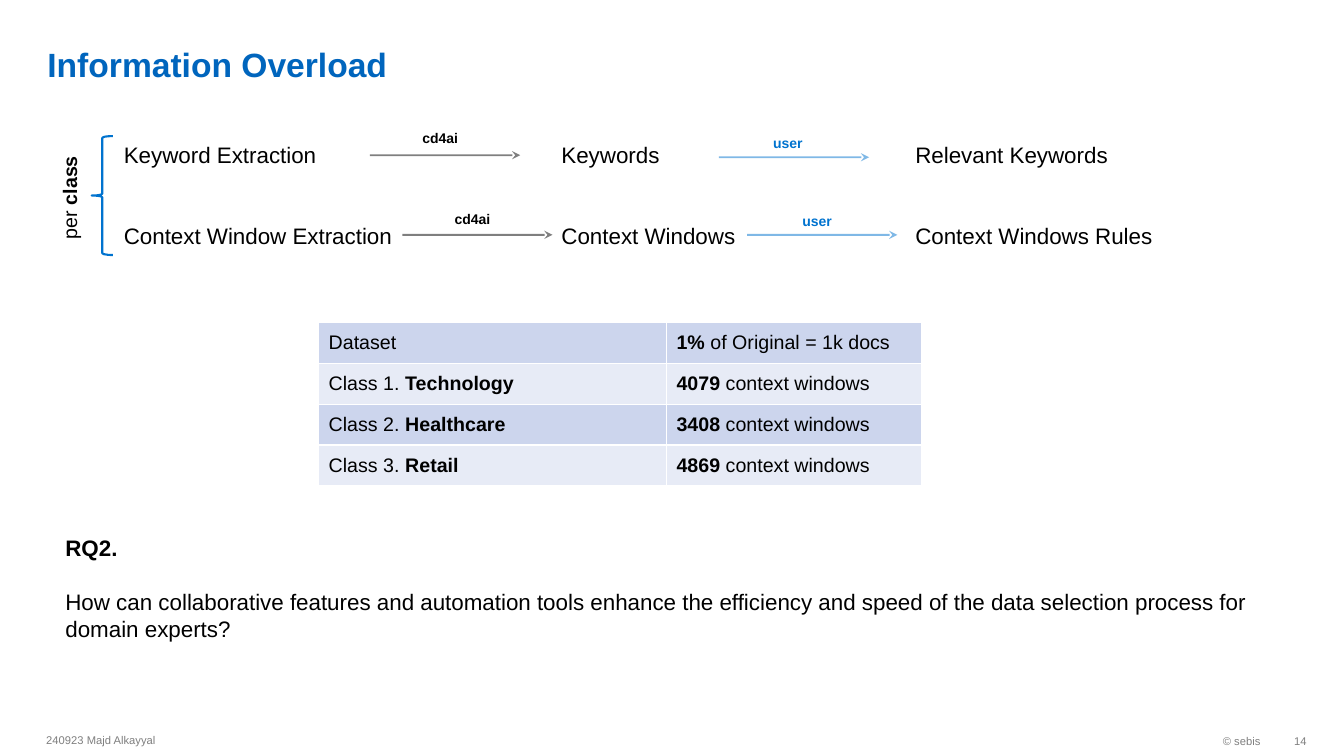
from dataclasses import dataclass

from lxml import etree
from pptx import Presentation
from pptx.dml.color import RGBColor
from pptx.enum.shapes import MSO_CONNECTOR as Connector, MSO_SHAPE as Shape
from pptx.enum.text import MSO_ANCHOR as Anchor, MSO_AUTO_SIZE as AutoSize, PP_ALIGN as Align
from pptx.oxml.ns import qn
from pptx.util import Inches, Pt

BLACK, WHITE, GREY = "000000", "FFFFFF", "7F7F7F"
TITLE_BLUE, BLUE = "0065BD", "0073CF"
BAND_FILLS = ("CCD5ED", "E7EBF6")
BODY_LINE = 19.3  # height of one 16 pt line, in points


@dataclass
class Run:
    text: str
    bold: bool = False


@dataclass
class Label:
    left: float
    top: float
    width: float
    height: float
    paragraphs: list[list[Run]]
    size: float = 16
    color: str = BLACK
    gap: float = 0
    align: Align = Align.LEFT
    anchor: Anchor = Anchor.TOP
    rotation: float = 0
    right_inset: float = 0.1


@dataclass
class Arrow:
    left: float
    top: float
    label: str
    label_left: float
    label_top: float
    color: str


def rgb(color: str) -> RGBColor:
    return RGBColor.from_string(color)


def add_runs(paragraph, runs: list[Run], size: float, color: str) -> None:
    for part in runs:
        run = paragraph.add_run()
        run.text = part.text
        run.font.name = "Arial"
        run.font.size = Pt(size)
        run.font.bold = part.bold
        run.font.color.rgb = rgb(color)


def add_label(slide, label: Label) -> None:
    box = slide.shapes.add_textbox(
        Inches(label.left), Inches(label.top), Inches(label.width), Inches(label.height))
    box.rotation = label.rotation
    frame = box.text_frame
    frame.word_wrap = True
    frame.vertical_anchor = label.anchor
    frame.margin_right = Inches(label.right_inset)
    for index, runs in enumerate(label.paragraphs):
        paragraph = frame.add_paragraph() if index else frame.paragraphs[0]
        paragraph.alignment = label.align
        if index:
            paragraph.space_before = Pt(label.gap)
        add_runs(paragraph, runs, label.size, label.color)


def add_arrow(slide, arrow: Arrow) -> None:
    top = Inches(arrow.top)
    connector = slide.shapes.add_connector(
        Connector.STRAIGHT, Inches(arrow.left), top, Inches(arrow.left + 1.49), top)
    connector.line.width = Pt(1.35)
    connector.line.color.rgb = rgb(arrow.color)
    properties = connector._element.spPr
    color = properties.find(".//" + qn("a:srgbClr"))
    etree.SubElement(color, qn("a:alpha"), val="50000")
    etree.SubElement(properties.find(qn("a:ln")), qn("a:tailEnd"), type="stealth")
    etree.SubElement(properties, qn("a:effectLst"))
    add_label(slide, Label(arrow.label_left, arrow.label_top, 0.65, 0.27,
                           [[Run(arrow.label, True)]], 10, arrow.color, right_inset=0))


def add_cell_borders(cell) -> None:
    properties = cell._tc.get_or_add_tcPr()
    for index, side in enumerate(("lnL", "lnR", "lnT", "lnB")):
        border = etree.Element(qn(f"a:{side}"), w=str(Pt(1)))
        fill = etree.SubElement(border, qn("a:solidFill"))
        etree.SubElement(fill, qn("a:srgbClr"), val=WHITE)
        properties.insert(index, border)


def add_dataset_table(slide, rows: list[tuple[list[Run], list[Run]]]) -> None:
    row_height = Inches(1.62) // len(rows)
    table = slide.shapes.add_table(len(rows), 2, Inches(3.16), Inches(3.2),
                                   Inches(5.98), Inches(1.62)).table
    table.first_row = table.horz_banding = False
    for column, width in zip(table.columns, (3.45, 2.53)):
        column.width = Inches(width)
    for row_index, cells in enumerate(rows):
        table.rows[row_index].height = row_height
        for column_index, runs in enumerate(cells):
            cell = table.cell(row_index, column_index)
            cell.vertical_anchor = Anchor.MIDDLE
            cell.fill.solid()
            cell.fill.fore_color.rgb = rgb(BAND_FILLS[row_index % 2])
            add_cell_borders(cell)
            add_runs(cell.text_frame.paragraphs[0], runs, 14, BLACK)


def add_title(slide, text: str) -> None:
    title = slide.shapes.title
    title.left, title.top = Inches(0.37), Inches(0.05)
    title.width, title.height = Inches(11.58), Inches(0.79)
    frame = title.text_frame
    frame.auto_size = AutoSize.NONE
    frame.vertical_anchor = Anchor.BOTTOM
    frame.margin_top = frame.margin_bottom = 0
    frame.paragraphs[0].alignment = Align.LEFT
    add_runs(frame.paragraphs[0], [Run(text, True)], 24, TITLE_BLUE)


def add_brace(slide) -> None:
    brace = slide.shapes.add_shape(
        Shape.LEFT_BRACE, Inches(0.91), Inches(1.35), Inches(0.21), Inches(1.18))
    brace.shadow.inherit = False
    brace.fill.background()
    brace.line.color.rgb = rgb(BLUE)
    brace.line.width = Pt(1.5)


def main() -> None:
    presentation = Presentation()
    presentation.slide_width, presentation.slide_height = Inches(13.33), Inches(7.5)
    slide = presentation.slides.add_slide(presentation.slide_layouts[5])
    add_title(slide, "Information Overload")

    # Steps of the process, one column per stage
    for left, width, keyword_step, window_step in (
        (1.13, 3.43, "Keyword Extraction", "Context Window Extraction"),
        (5.47, 2.52, "Keywords", "Context Windows"),
        (8.98, 3.23, "Relevant Keywords", "Context Windows Rules"),
    ):
        add_label(slide, Label(left, 1.35, width, 1.18, [[Run(keyword_step)], [Run(window_step)]],
                               gap=2 * BODY_LINE))
    for arrow in (
        Arrow(3.67, 1.54, "cd4ai", 4.09, 1.24, BLACK),
        Arrow(7.13, 1.56, "user", 7.57, 1.29, BLUE),
        Arrow(3.99, 2.33, "cd4ai", 4.41, 2.04, BLACK),
        Arrow(7.41, 2.33, "user", 7.86, 2.06, BLUE),
    ):
        add_arrow(slide, arrow)

    # Brace with its upright label
    add_brace(slide)
    add_label(slide, Label(-0.05, 1.56, 1.48, 0.34, [[Run("per "), Run("class", True)]],
                           14, rotation=270))

    # Context windows per class
    classes = (("Technology", 4079), ("Healthcare", 3408), ("Retail", 4869))
    add_dataset_table(slide, [
        ([Run("Dataset")], [Run("1%", True), Run(" of Original = 1k docs")]),
        *(([Run(f"Class {number}. "), Run(name, True)],
           [Run(str(count), True), Run(" context windows")])
          for number, (name, count) in enumerate(classes, 1)),
    ])

    # Research question
    question = ("How can collaborative features and automation tools enhance the efficiency "
                "and speed of the data selection process for domain experts?")
    add_label(slide, Label(0.55, 5.25, 12.42, 1.45, [[Run("RQ2.", True)], [Run(question)]],
                           gap=BODY_LINE))

    # Footer
    for left, top, width, text, align, right_inset in (
        (0.36, 7.18, 6.3, "240923 Majd Alkayyal", Align.LEFT, 0.1),
        (10.26, 7.19, 2.34, "© sebis", Align.RIGHT, 0.1),
        (12.6, 7.19, 0.36, "14", Align.RIGHT, 0),
    ):
        add_label(slide, Label(left, top, width, 0.32, [[Run(text)]], 8, GREY, align=align,
                               anchor=Anchor.MIDDLE, right_inset=right_inset))

    presentation.save("out.pptx")


if __name__ == "__main__":
    main()
